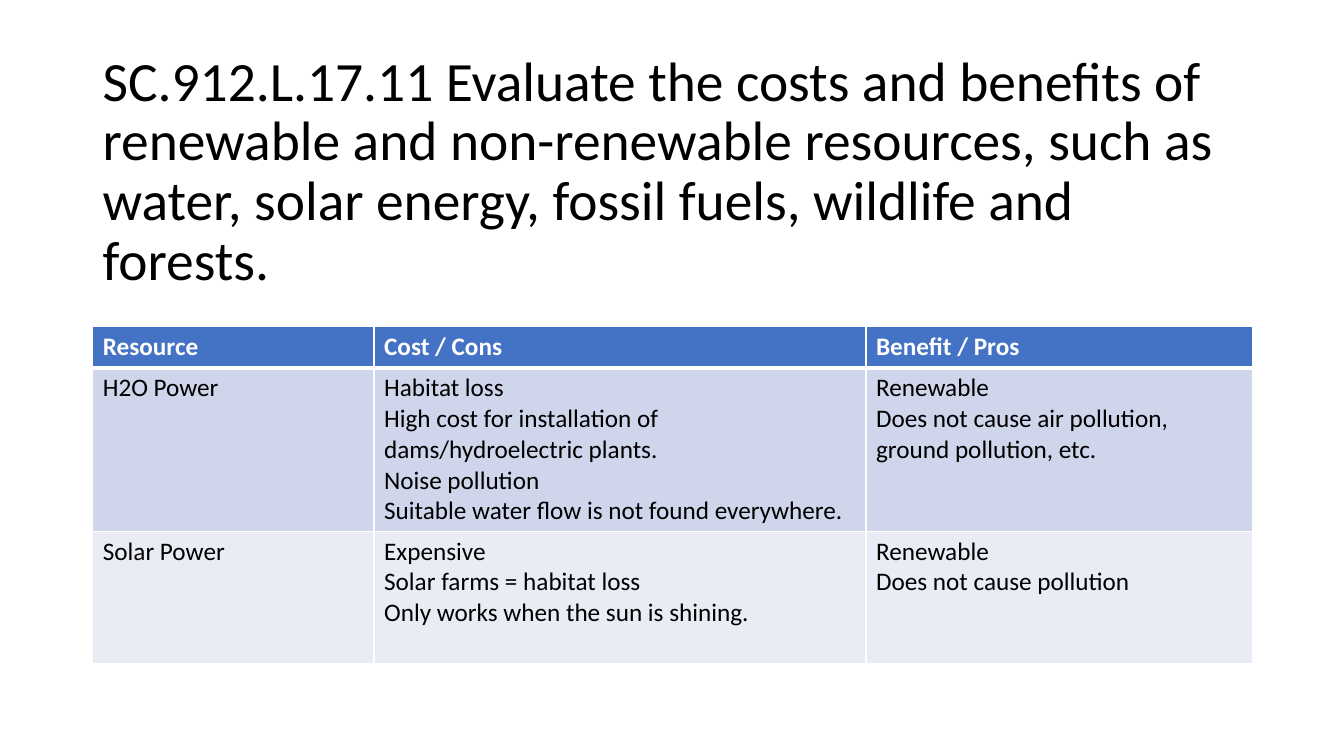
from dataclasses import dataclass

from lxml.etree import SubElement
from pptx import Presentation
from pptx.dml.color import RGBColor
from pptx.enum.text import MSO_ANCHOR
from pptx.oxml.ns import qn
from pptx.util import Inches, Pt


@dataclass(frozen=True)
class Theme:
    font: str = "Calibri"
    title_size: float = 39.6
    table_size: float = 18
    text: str = "000000"
    light: str = "FFFFFF"
    header_fill: str = "4472C4"
    band_fills: tuple = ("CFD5EA", "E9EBF5")
    line: float = 1
    header_line: float = 3


THEME = Theme()

TITLE = (
    "SC.912.L.17.11 Evaluate the costs and benefits of renewable and "
    "non-renewable resources, such as water, solar energy, fossil fuels, "
    "wildlife and forests."
)
RESOURCES = [
    ["Resource", "Cost / Cons", "Benefit / Pros"],
    [
        "H2O Power",
        "Habitat loss\n"
        "High cost for installation of dams/hydroelectric plants.\n"
        "Noise pollution\n"
        "Suitable water flow is not found everywhere.",
        "Renewable\nDoes not cause air pollution, ground pollution, etc.",
    ],
    [
        "Solar Power",
        "Expensive\nSolar farms = habitat loss\nOnly works when the sun is shining.",
        "Renewable\nDoes not cause pollution",
    ],
]
COLUMN_WIDTHS = (2.79, 4.88, 3.83)
ROW_HEIGHTS = (0.41, 1.62, 1.31)


def format_runs(text_frame, size, color, bold=False):
    for paragraph in text_frame.paragraphs:
        for run in paragraph.runs:
            run.font.name = THEME.font
            run.font.size = Pt(size)
            run.font.bold = bold
            run.font.color.rgb = RGBColor.from_string(color)


def set_borders(cell, above, below):
    """Draw the cell's four edges; above and below are widths in points."""
    properties = cell._tc.get_or_add_tcPr()
    edges = {"L": THEME.line, "R": THEME.line, "T": above, "B": below}
    for edge, width in edges.items():
        line = SubElement(properties, qn(f"a:ln{edge}"), w=str(Pt(width)))
        fill = SubElement(line, qn("a:solidFill"))
        SubElement(fill, qn("a:srgbClr"), val=THEME.light)


def add_title(slide, left, top, width, height):
    shape = slide.shapes.add_textbox(
        Inches(left), Inches(top), Inches(width), Inches(height)
    )
    text_frame = shape.text_frame
    text_frame.word_wrap = True
    text_frame.vertical_anchor = MSO_ANCHOR.MIDDLE
    text_frame.text = TITLE
    text_frame.paragraphs[0].line_spacing = 0.9
    format_runs(text_frame, THEME.title_size, THEME.text)


def add_resource_table(slide, left, top):
    table = slide.shapes.add_table(
        len(RESOURCES),
        len(COLUMN_WIDTHS),
        Inches(left),
        Inches(top),
        Inches(sum(COLUMN_WIDTHS)),
        Inches(sum(ROW_HEIGHTS)),
    ).table
    for column, width in zip(table.columns, COLUMN_WIDTHS):
        column.width = Inches(width)

    fills = (THEME.header_fill, *THEME.band_fills)
    for index, (row, height) in enumerate(zip(table.rows, ROW_HEIGHTS)):
        row.height = Inches(height)
        is_header = index == 0
        above = THEME.header_line if index == 1 else THEME.line
        below = THEME.header_line if is_header else THEME.line
        color = THEME.light if is_header else THEME.text
        for cell, text in zip(row.cells, RESOURCES[index]):
            cell.text_frame.text = text
            format_runs(cell.text_frame, THEME.table_size, color, bold=is_header)
            set_borders(cell, above, below)
            cell.fill.solid()
            cell.fill.fore_color.rgb = RGBColor.from_string(fills[index])


def main():
    presentation = Presentation()
    presentation.slide_width = Inches(13.33)
    presentation.slide_height = Inches(7.5)
    slide = presentation.slides.add_slide(presentation.slide_layouts[6])
    add_title(slide, 0.92, 0.4, 11.5, 2.63)
    add_resource_table(slide, 0.92, 3.24)
    presentation.save("out.pptx")


if __name__ == "__main__":
    main()
